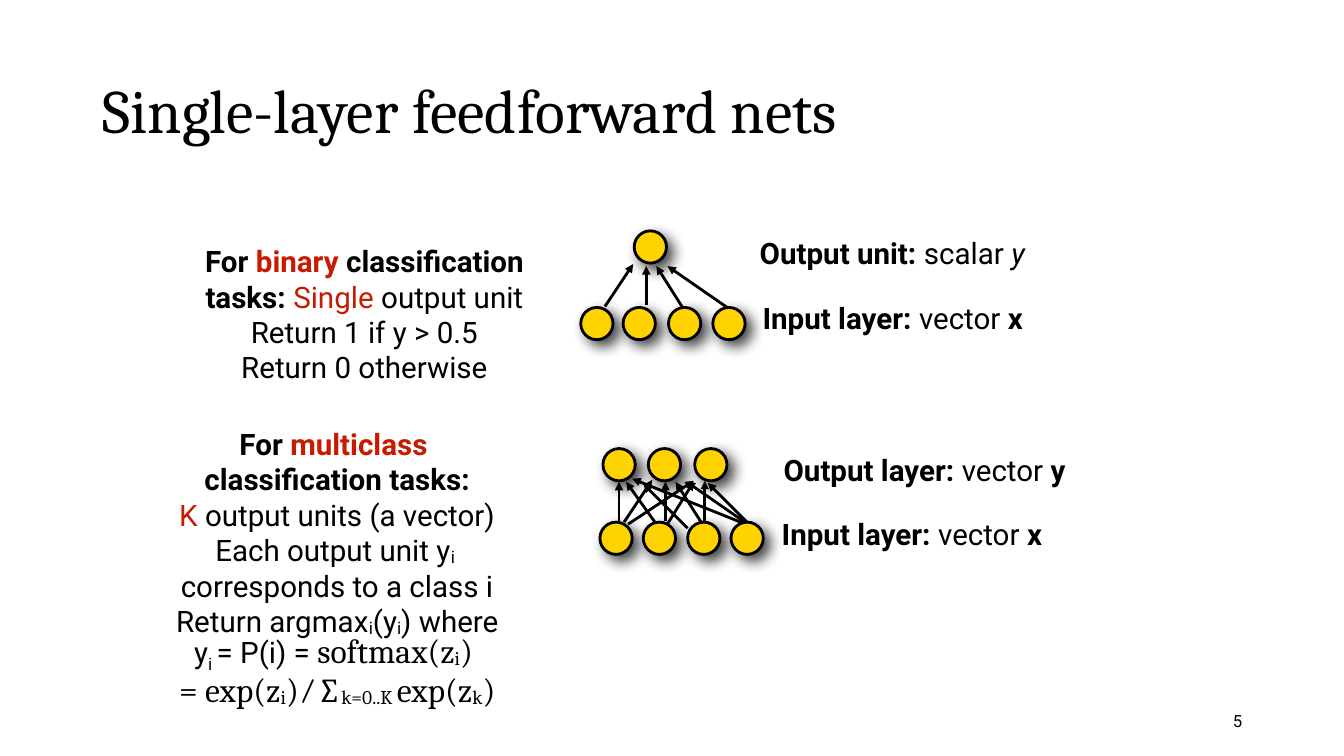
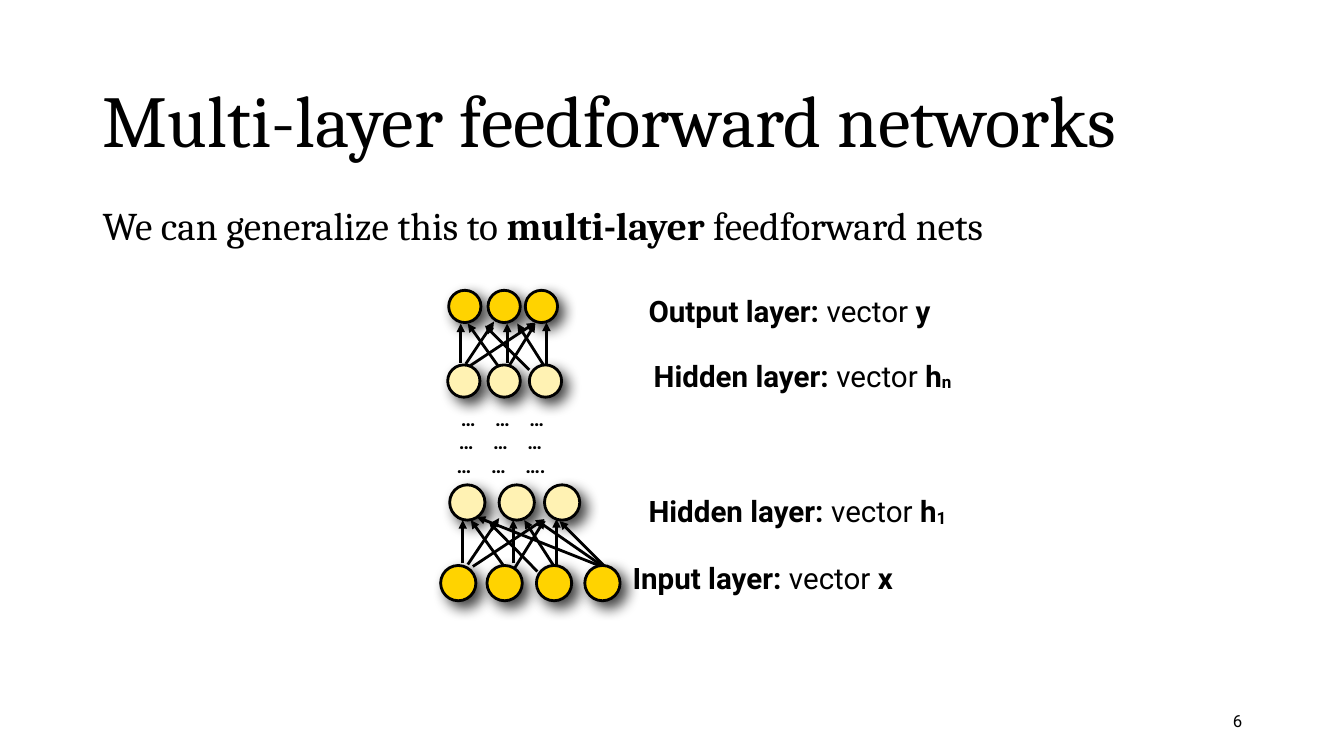
from lxml import etree
from pptx import Presentation
from pptx.dml.color import RGBColor
from pptx.enum.shapes import MSO_CONNECTOR, MSO_SHAPE
from pptx.enum.text import MSO_ANCHOR, PP_ALIGN
from pptx.oxml.ns import qn
from pptx.util import Pt

PX = 9144  # EMU per px, 100 px to the inch
LEFT, CENTER, RIGHT = PP_ALIGN.LEFT, PP_ALIGN.CENTER, PP_ALIGN.RIGHT
TOP, MIDDLE = MSO_ANCHOR.TOP, MSO_ANCHOR.MIDDLE
OVAL, STRAIGHT = MSO_SHAPE.OVAL, MSO_CONNECTOR.STRAIGHT

COLORS = {"black": "000000", "red": "C71B00", "unit": "FFD300", "hidden": "FFF2B3"}

# Text formats: font values plus paragraph and frame values
TITLE = {"size": 44, "name": "Cambria", "align": LEFT, "spacing": 0.9,
         "anchor": MIDDLE, "inset": (10, 5)}
BIG_TITLE = {**TITLE, "size": 52.2, "spacing": Pt(69)}
BODY = {**TITLE, "size": 28, "anchor": TOP}
NUMBER = {**TITLE, "size": 12, "name": "Roboto", "align": RIGHT, "spacing": 1.0}
LABEL = {"size": 21.1, "name": "Roboto", "align": CENTER, "spacing": Pt(25.3),
         "anchor": MIDDLE, "inset": (4, 4)}
DOTS = {**LABEL, "size": 14.1, "align": LEFT, "spacing": Pt(16.9)}

# Run formats
PLAIN = {}
BOLD = {"bold": True}
ITALIC = {"italic": True}
RED = {"color": "red"}
BOLD_RED = {**BOLD, **RED}
SUB = {"baseline": -6}
BOLD_SUB = {**BOLD, **SUB}
MATH = {"name": "Cambria", "size": 24}
MATH_SUB = {**MATH, **SUB}
BREAK = ("\n", PLAIN)

# Arrows into each output unit, relative to the foot of the first arrow
ARROWS = {
    "left": [(0, 0, 0, -39), (37, 3, 7, -39), (68, 7, 24, -37), (123, 2, 13, -42)],
    "middle": [(5, 1, 33, -41), (46, 0, 46, -39), (82, 2, 56, -39), (132, 6, 67, -39)],
    "right": [(9, 3, 74, -40), (46, 6, 74, -39), (85, 9, 85, -40), (132, 6, 88, -38)],
}


def add_text(slide, box, style, paragraphs, tab_rows=()):
    """Add a text box; each paragraph is a list of (text, run format)."""
    frame = slide.shapes.add_textbox(*(value * PX for value in box)).text_frame
    frame.word_wrap = True
    frame.vertical_anchor = style["anchor"]
    across, down = style["inset"]
    frame.margin_left = frame.margin_right = across * PX
    frame.margin_top = frame.margin_bottom = down * PX
    for index, runs in enumerate(paragraphs):
        paragraph = frame.add_paragraph() if index else frame.paragraphs[0]
        if tab_rows:
            tabs = etree.SubElement(paragraph._p.get_or_add_pPr(), qn("a:tabLst"))
            for stop in tab_rows[index]:
                etree.SubElement(tabs, qn("a:tab"), pos=str(stop * PX), algn="l")
        paragraph.alignment = style["align"]
        paragraph.line_spacing = style["spacing"]
        for text, changes in runs:
            if text == "\n":
                paragraph.add_line_break()
                continue
            run = paragraph.add_run()
            run.text = text
            look = {"bold": False, "italic": False, "color": "black", **style, **changes}
            font_values = {"name": look["name"], "size": Pt(look["size"]),
                           "bold": look["bold"], "italic": look["italic"]}
            for name, value in font_values.items():
                setattr(run.font, name, value)
            run.font.color.rgb = RGBColor.from_string(COLORS[look["color"]])
            if "baseline" in look:
                run._r.get_or_add_rPr().set("baseline", str(look["baseline"] * 1000))


def add_network(slide, origin, scale, feet, targets, size, rows):
    """Draw the arrows from the first `feet` units, then the rows of units."""
    for target in targets:
        for arrow in ARROWS[target][:feet]:
            ends = [round(origin[i % 2] + scale * value) * PX
                    for i, value in enumerate(arrow)]
            connector = slide.shapes.add_connector(STRAIGHT, *ends)
            connector.line.color.rgb = RGBColor.from_string(COLORS["black"])
            connector.line.width = Pt(2)
            etree.SubElement(connector.line._get_or_add_ln(), qn("a:tailEnd"),
                             type="triangle")
            etree.SubElement(connector._element.spPr, qn("a:effectLst"))
    for top, fill, lefts in rows:
        for left in lefts:
            shape = slide.shapes.add_shape(
                OVAL, left * PX, top * PX, size * PX, size * PX)
            shape.fill.solid()
            shape.fill.fore_color.rgb = RGBColor.from_string(COLORS[fill])
            shape.line.color.rgb = RGBColor.from_string(COLORS["black"])
            shape.line.width = Pt(2)
            shape.shadow.inherit = False
            effects = shape._element.spPr.find(qn("a:effectLst"))
            shadow = etree.SubElement(
                effects, qn("a:outerShdw"), blurRad=str(Pt(10)), dist=str(Pt(6)),
                dir="2700000", algn="tl", rotWithShape="0")
            color = etree.SubElement(shadow, qn("a:srgbClr"), val=COLORS["black"])
            etree.SubElement(color, qn("a:alpha"), val="75000")


presentation = Presentation()
presentation.slide_width, presentation.slide_height = 1333 * PX, 750 * PX

# Blank slides with title and number
slides = []
for title, style, number in (
    ("Single-layer feedforward nets", TITLE, "5"),
    ("Multi-layer feedforward networks", BIG_TITLE, "6"),
):
    slide = presentation.slides.add_slide(presentation.slide_layouts[6])
    add_text(slide, (92, 40, 1150, 145), style, [[(title, PLAIN)]])
    add_text(slide, (942, 695, 300, 40), NUMBER, [[(number, PLAIN)]])
    slides.append(slide)
single, multi = slides

# Networks
ALL = ("left", "middle", "right")
add_network(single, (595, 303), 1, 4, ("middle",), 32,
            [(305, "unit", (576, 618, 663, 707)), (229, "unit", (629,))])
add_network(single, (614, 517), 1, 4, ALL, 32,
            [(518, "unit", (595, 638, 682, 725)), (445, "unit", (598, 643, 689))])
add_network(multi, (459, 559), 1.095, 4, ALL, 35,
            [(561, "unit", (437, 483, 532, 580)), (481, "hidden", (446, 495, 540))])
add_network(multi, (457, 360), 1, 3, ALL, 32,
            [(362, "hidden", (444, 484, 525)), (288, "unit", (445, 484, 521))])

# Layer labels
VECTOR_X = [("vector ", PLAIN), ("x", BOLD)]
VECTOR_Y = [("vector ", PLAIN), ("y", BOLD)]
VECTOR_H = [("vector ", PLAIN), ("h", BOLD)]
for slide, box, layer, value in (
    (single, (734, 229, 302, 43), "Output unit: ", [("scalar ", PLAIN), ("y", ITALIC)]),
    (single, (739, 294, 293, 43), "Input layer: ", VECTOR_X),
    (single, (761, 444, 312, 43), "Output layer: ", VECTOR_Y),
    (single, (758, 508, 293, 43), "Input layer: ", VECTOR_X),
    (multi, (627, 287, 312, 43), "Output layer: ", VECTOR_Y),
    (multi, (627, 351, 338, 43), "Hidden layer: ", VECTOR_H + [("n", BOLD_SUB)]),
    (multi, (620, 464, 342, 86), "Hidden layer: ", VECTOR_H + [("1", BOLD_SUB)]),
    (multi, (596, 550, 321, 47), "Input layer: ", VECTOR_X),
):
    add_text(slide, box, LABEL, [[(layer, BOLD), *value]])

# Classification tasks
add_text(single, (197, 220, 329, 183), LABEL, [
    [("For ", BOLD), ("binary", BOLD_RED), (" classification tasks: ", BOLD),
     ("Single", RED), (" output unit", PLAIN)],
    [("Return 1 if y > 0.5", PLAIN)],
    [("Return 0 otherwise", PLAIN)],
])
add_text(single, (50, 419, 569, 288), LABEL, [
    [("For ", BOLD), ("multiclass ", BOLD_RED), BREAK, ("classification tasks:", BOLD)],
    [("K", RED), (" output units (a vector)", PLAIN)],
    [("Each output unit y", PLAIN), ("i ", SUB), BREAK,
     ("corresponds to a class i", PLAIN)],
    [("Return argmax", PLAIN), ("i", SUB), ("(y", PLAIN), ("i", SUB), (") where", PLAIN)],
    [("y", PLAIN), ("i ", {"baseline": -25}), ("= P(i) = ", PLAIN),
     ("softmax(z", MATH), ("i", MATH_SUB), (") ", MATH), BREAK,
     ("= exp(z", MATH), ("i", MATH_SUB), (") ∕ ∑", MATH), ("k=0..K ", MATH_SUB),
     ("exp(z", MATH), ("k", MATH_SUB), (")", MATH)],
])

# Generalization and the hidden layers left out
add_text(multi, (92, 200, 1150, 476), BODY, [
    [("We can generalize this to ", PLAIN), ("multi-layer", BOLD),
     (" feedforward nets", PLAIN)],
])
add_text(multi, (438, 399, 121, 79), DOTS,
         [[("\t…\t…\t" + last, BOLD)] for last in ("…", "…", "….")],
         [[start + 34 * column for column in range(3)] for start in (15, 13, 11)])

presentation.save("out.pptx")
